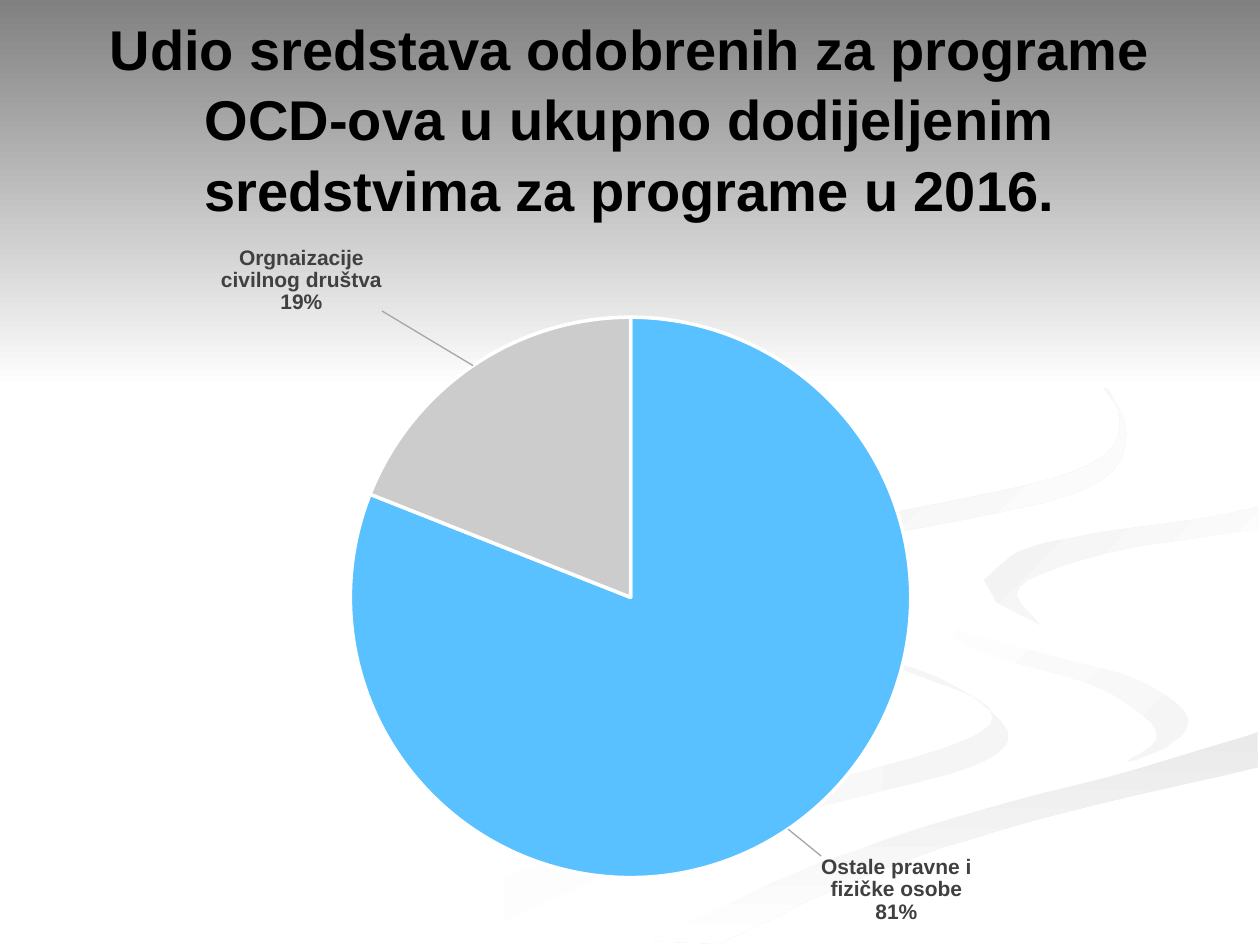
from lxml import etree
from pptx import Presentation
from pptx import util as u
from pptx.chart.data import CategoryChartData
from pptx.dml.color import RGBColor
from pptx.enum import chart as charts, shapes, text
from pptx.oxml import parse_xml
from pptx.oxml.ns import nsdecls, qn

Pt = u.Pt
UNIT = Pt(0.72)
STEPS = 5

EAST_BANK = [(724, 464), (758, 498), (830, 519), (905, 540), (943, 570), (926, 593), (894, 605)]
SOUTH_BANK = [(998, 581), (903, 610), (764, 647), (630, 693), (519, 747)]
NORTH_BANK = [(781, 460), (811, 437), (865, 424), (967, 409), (998, 402)]

RIBBONS = [
    (["FFFFFF", "F5F5F5"], 0, [
        [(575, 459), (583, 477), (642, 507), (745, 538), (800, 581), (769, 609), (676, 634),
         (532, 674), (361, 749)],
        [(300, 749), (417, 690), (579, 639), (749, 594), (785, 562), (697, 525), (593, 491),
         (570, 470)]]),
    (["FFFFFF", "F5F5F5"], 45, [
        EAST_BANK, [(894, 605), (918, 581), (868, 544), (766, 512), (724, 464)]]),
    (["EAEAEA", "FFFFFF"], 90, [
        SOUTH_BANK, [(571, 749), (695, 692), (821, 651), (998, 609)]]),
    (["FFFFFF"], 0, [
        EAST_BANK, [(811, 625), (663, 668), (477, 749)], SOUTH_BANK[::-1],
        [(998, 538), (866, 509), (781, 460)], NORTH_BANK,
        [(998, 387), (851, 411), (755, 432), (724, 464)]]),
    (["F1F1F1", "FFFFFF"], 45, [
        NORTH_BANK, [(998, 420), (878, 439), (809, 466), (826, 496)], [(791, 478)]]),
    (["EDEDED", "FFFFFF"], 45, [
        [(762, 233), (854, 283), (894, 344), (855, 391), (683, 430), (593, 470), (622, 500)],
        [(577, 462), (625, 426), (842, 378), (889, 335), (846, 279), (762, 233)]]),
]


def color(value):
    """Return the colour for a hex string."""
    return RGBColor.from_string(value)


def set_font(font, size, value):
    """Apply the bold Arial style."""
    font.name, font.size, font.bold = "Arial", Pt(size), True
    font.color.rgb = color(value)


def smooth(edge):
    """Return a Catmull-Rom curve through the points of an open edge."""
    padded = [edge[0], *edge, edge[-1]]
    curve = []
    for a, b, c, d in zip(padded, padded[1:], padded[2:], padded[3:]):
        for step in range(STEPS):
            t = step / STEPS
            curve.append(tuple(
                q + t * (r - p + t * (2 * p - 5 * q + 4 * r - s
                                      + t * (3 * q - p - 3 * r + s))) / 2
                for p, q, r, s in zip(a, b, c, d)))
    return curve + [edge[-1]]


def paint(shape, colors, angle):
    """Give a shape a solid or two-colour fill without outline."""
    shape.shadow.inherit = False
    shape.line.fill.background()
    if len(colors) == 1:
        shape.fill.solid()
        shape.fill.fore_color.rgb = color(colors[0])
        return
    shape.fill.gradient()
    shape.fill.gradient_angle = -angle % 360
    for stop, value in zip(shape.fill.gradient_stops, colors):
        stop.color.rgb = color(value)


def add_background(slide, left, top, width, band_height):
    """Draw the winding ribbons and the shaded band."""
    for colors, angle, edges in RIBBONS:
        points = [point for edge in edges for point in smooth(edge)]
        builder = slide.shapes.build_freeform(*points[0], scale=UNIT)
        builder.add_line_segments(points[1:], close=True)
        paint(builder.convert_to_shape(left, top), colors, angle)
    band = slide.shapes.add_shape(
        shapes.MSO_SHAPE.RECTANGLE, left, top, width, band_height)
    paint(band, ["808080", "FFFFFF"], 90)


def add_title(slide, left, top, width, height):
    """Add the centred heading."""
    frame = slide.shapes.add_textbox(left, top, width, height).text_frame
    frame.word_wrap = True
    frame.vertical_anchor = text.MSO_ANCHOR.MIDDLE
    paragraph = frame.paragraphs[0]
    paragraph.text = ("Udio sredstava odobrenih za programe OCD-ova u ukupno "
                      "dodijeljenim sredstvima za programe u 2016.")
    paragraph.alignment = text.PP_ALIGN.CENTER
    paragraph.line_spacing = 1.05
    set_font(paragraph.font, 32, "000000")


def manual_layout(**values):
    """Build a manual chart layout from its child values."""
    children = "".join(f'<c:{name} val="{value}"/>' for name, value in values.items())
    return parse_xml(f'<c:layout {nsdecls("c")}><c:manualLayout>{children}'
                     '</c:manualLayout></c:layout>')


def style_slice(series, index, fill, offset):
    """Colour one slice and move its label outwards."""
    point = series.points[index]
    point.format.fill.solid()
    point.format.fill.fore_color.rgb = color(fill)
    point.format.line.color.rgb = color("FFFFFF")
    point.format.line.width = Pt(2)
    set_font(point.data_label.font, 12, "404040")
    point.data_label.position = charts.XL_LABEL_POSITION.OUTSIDE_END
    label = series._element.xpath(f'.//c:dLbl[c:idx/@val="{index}"]')[0]
    label.find(qn("c:idx")).addnext(manual_layout(x=offset[0], y=offset[1]))
    for name, value in (("showVal", "0"), ("showCatName", "1"), ("showPercent", "1")):
        label.find(qn(f"c:{name}")).set("val", value)
    etree.SubElement(label, qn("c:separator")).text = "\n"


def add_pie(slide, left, top, width, height):
    """Add the pie of approved funds."""
    data = CategoryChartData()
    data.categories = ["Ostale pravne i fizičke osobe", "Orgnaizacije civilnog društva"]
    data.add_series("Series 1", (81, 19))
    chart = slide.shapes.add_chart(
        charts.XL_CHART_TYPE.PIE, left, top, width, height, data).chart
    chart.has_legend = chart.has_title = False
    chart.font.name, chart.font.size = "Times New Roman", Pt(10)
    plot = chart.plots[0]
    plot.vary_by_categories = True
    series = plot.series[0]
    labels = series.data_labels
    set_font(labels.font, 12, "404040")
    labels.show_value = False
    labels.show_category_name = labels.show_percentage = True
    style_slice(series, 0, "59C1FF", (0.03, 0.03))
    style_slice(series, 1, "CCCCCC", (-0.09, -0.07))
    series._element.xpath("c:dLbls/c:showLeaderLines")[0].addnext(parse_xml(
        f'<c:leaderLines {nsdecls("c", "a")}><c:spPr><a:ln w="9525"><a:solidFill>'
        '<a:srgbClr val="A6A6A6"/></a:solidFill></a:ln></c:spPr></c:leaderLines>'))
    area = chart._chartSpace.xpath("c:chart/c:plotArea")[0]
    for layout in area.findall(qn("c:layout")):
        area.remove(layout)
    area.insert(0, manual_layout(layoutTarget="inner", xMode="edge", yMode="edge",
                                 x=0.21, y=0.1, w=0.58, h=0.81))


def main():
    """Build and save the slide."""
    presentation = Presentation()
    presentation.slide_width, presentation.slide_height = Pt(720), Pt(540)
    slide = presentation.slides.add_slide(presentation.slide_layouts[6])
    add_background(slide, Pt(0), Pt(0), Pt(720), Pt(221.76))
    add_title(slide, Pt(36), Pt(21.6), Pt(648), Pt(90))
    add_pie(slide, Pt(84.24), Pt(141.12), Pt(552.24), Pt(396.72))
    presentation.save("out.pptx")


if __name__ == "__main__":
    main()
